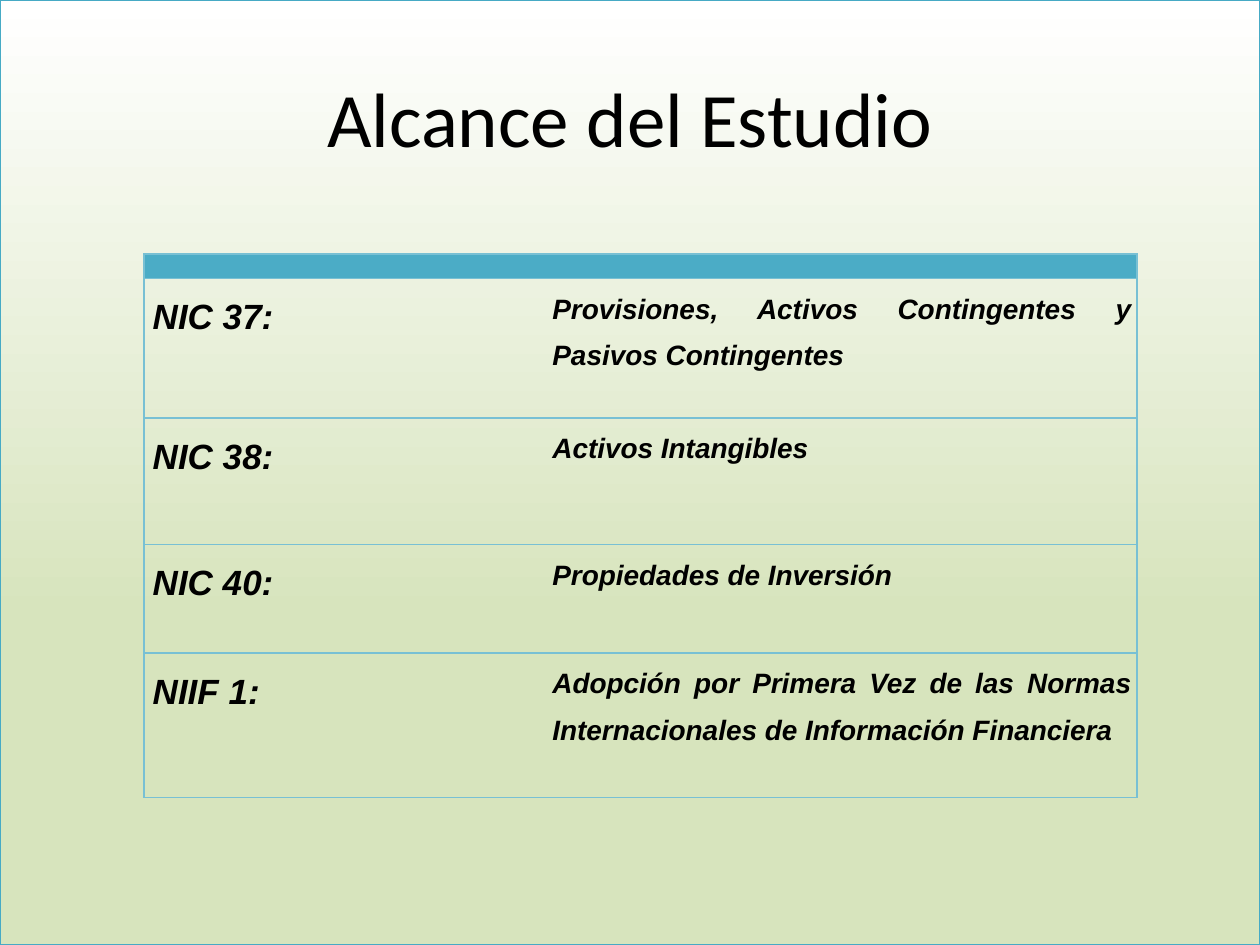
import copy
from dataclasses import dataclass

import pptx
import pptx.dml.color
import pptx.enum.shapes
import pptx.enum.text
import pptx.oxml
import pptx.oxml.ns
import pptx.util
from pptx.util import Pt

BLACK = pptx.dml.color.RGBColor(0x00, 0x00, 0x00)
WHITE = pptx.dml.color.RGBColor(0xFF, 0xFF, 0xFF)
GREEN = pptx.dml.color.RGBColor(0xD7, 0xE4, 0xBD)
FRAME_BLUE = pptx.dml.color.RGBColor(0x46, 0xAA, 0xC5)
HEADER_BLUE = pptx.dml.color.RGBColor(0x4B, 0xAC, 0xC6)
BORDER_BLUE = pptx.dml.color.RGBColor(0x78, 0xC0, 0xD4)

SLIDE_WIDTH, SLIDE_HEIGHT = Pt(720), Pt(540)
COLUMN_WIDTHS = (Pt(230.4), Pt(337))
HEADER_HEIGHT = Pt(13.9)


@dataclass
class Standard:
    name: str
    subject: str
    height: float


@dataclass
class CellStyle:
    size: float
    inset: float
    borders: str


NAME_STYLE = CellStyle(20, 5, "LTB")
SUBJECT_STYLE = CellStyle(16, 3, "RTB")

STANDARDS = (
    Standard("NIC 37:", "Provisiones, Activos Contingentes y Pasivos Contingentes", 79.7),
    Standard("NIC 38:", "Activos Intangibles", 72.5),
    Standard("NIC 40:", "Propiedades de Inversión", 62),
    Standard(
        "NIIF 1:",
        "Adopción por Primera Vez de las Normas Internacionales de Información Financiera",
        82.6,
    ),
)


def add_run(paragraph, text: str, font_name: str, size: float, emphasis: bool) -> None:
    run = paragraph.add_run()
    run.text = text
    run.font.name = font_name
    run.font.size = Pt(size)
    run.font.bold = emphasis
    run.font.italic = emphasis
    run.font.color.rgb = BLACK


def add_background(slide) -> None:
    shape = slide.shapes.add_shape(
        pptx.enum.shapes.MSO_SHAPE.RECTANGLE, 0, 0, SLIDE_WIDTH, SLIDE_HEIGHT
    )
    shape.shadow.inherit = False
    shape.line.color.rgb = FRAME_BLUE
    shape.line.width = Pt(0.75)
    shape.fill.gradient()
    shape.fill.gradient_angle = 90
    lower, upper = shape.fill.gradient_stops
    lower.color.rgb, lower.position = GREEN, 0
    upper.color.rgb, upper.position = WHITE, 1
    stops = shape.element.spPr.find(".//" + pptx.oxml.ns.qn("a:gsLst"))
    middle = copy.deepcopy(stops[0])
    middle.set("pos", "35000")
    stops.insert(1, middle)
    slide.shapes.element.insert(2, shape.element)


def add_title(slide, text: str) -> None:
    title = slide.shapes.title
    title.left, title.top, title.width, title.height = Pt(36), Pt(21.6), Pt(648), Pt(90)
    title.text_frame.vertical_anchor = pptx.enum.text.MSO_ANCHOR.MIDDLE
    paragraph = title.text_frame.paragraphs[0]
    paragraph.alignment = pptx.enum.text.PP_ALIGN.CENTER
    add_run(paragraph, text, "Calibri", 44, False)


def set_borders(cell, visible: str) -> None:
    properties = cell._tc.get_or_add_tcPr()
    for index, side in enumerate("LRTB"):
        paint = "<a:noFill/>"
        if side in visible:
            paint = f'<a:solidFill><a:srgbClr val="{BORDER_BLUE}"/></a:solidFill>'
        border = pptx.oxml.parse_xml(
            f'<a:ln{side} {pptx.oxml.ns.nsdecls("a")} w="{Pt(1)}">{paint}</a:ln{side}>'
        )
        properties.insert(index, border)


def set_insets(cell, horizontal: float) -> None:
    cell.margin_left = cell.margin_right = Pt(horizontal)
    cell.margin_top = cell.margin_bottom = Pt(0)


def fill_cell(cell, text: str, style: CellStyle) -> None:
    set_insets(cell, style.inset)
    cell.fill.background()
    set_borders(cell, style.borders)
    paragraph = cell.text_frame.paragraphs[0]
    paragraph.alignment = pptx.enum.text.PP_ALIGN.JUSTIFY
    paragraph.line_spacing = 1.5
    add_run(paragraph, text, "Arial", style.size, True)


def format_header(table) -> None:
    table.rows[0].height = HEADER_HEIGHT
    for cell in table.rows[0].cells:
        set_insets(cell, 0)
        cell.fill.solid()
        cell.fill.fore_color.rgb = HEADER_BLUE
        set_borders(cell, "LRTB")
        end_properties = pptx.oxml.parse_xml(
            f'<a:endParaRPr {pptx.oxml.ns.nsdecls("a")} sz="800"/>'
        )
        cell.text_frame.paragraphs[0]._p.append(end_properties)
    table.cell(0, 0).merge(table.cell(0, 1))


def add_standards_table(slide) -> None:
    height = HEADER_HEIGHT + sum(Pt(standard.height) for standard in STANDARDS)
    table = slide.shapes.add_table(
        len(STANDARDS) + 1, 2, Pt(82.3), Pt(145.2), sum(COLUMN_WIDTHS), height
    ).table
    table.first_row = False
    table.horz_banding = False
    for column, width in zip(table.columns, COLUMN_WIDTHS):
        column.width = width
    format_header(table)
    for index, standard in enumerate(STANDARDS, start=1):
        table.rows[index].height = Pt(standard.height)
        fill_cell(table.cell(index, 0), standard.name, NAME_STYLE)
        fill_cell(table.cell(index, 1), standard.subject, SUBJECT_STYLE)


def main() -> None:
    presentation = pptx.Presentation()
    presentation.slide_width, presentation.slide_height = SLIDE_WIDTH, SLIDE_HEIGHT
    slide = presentation.slides.add_slide(presentation.slide_layouts[5])
    add_background(slide)
    add_title(slide, "Alcance del Estudio")
    add_standards_table(slide)
    presentation.save("out.pptx")


if __name__ == "__main__":
    main()
